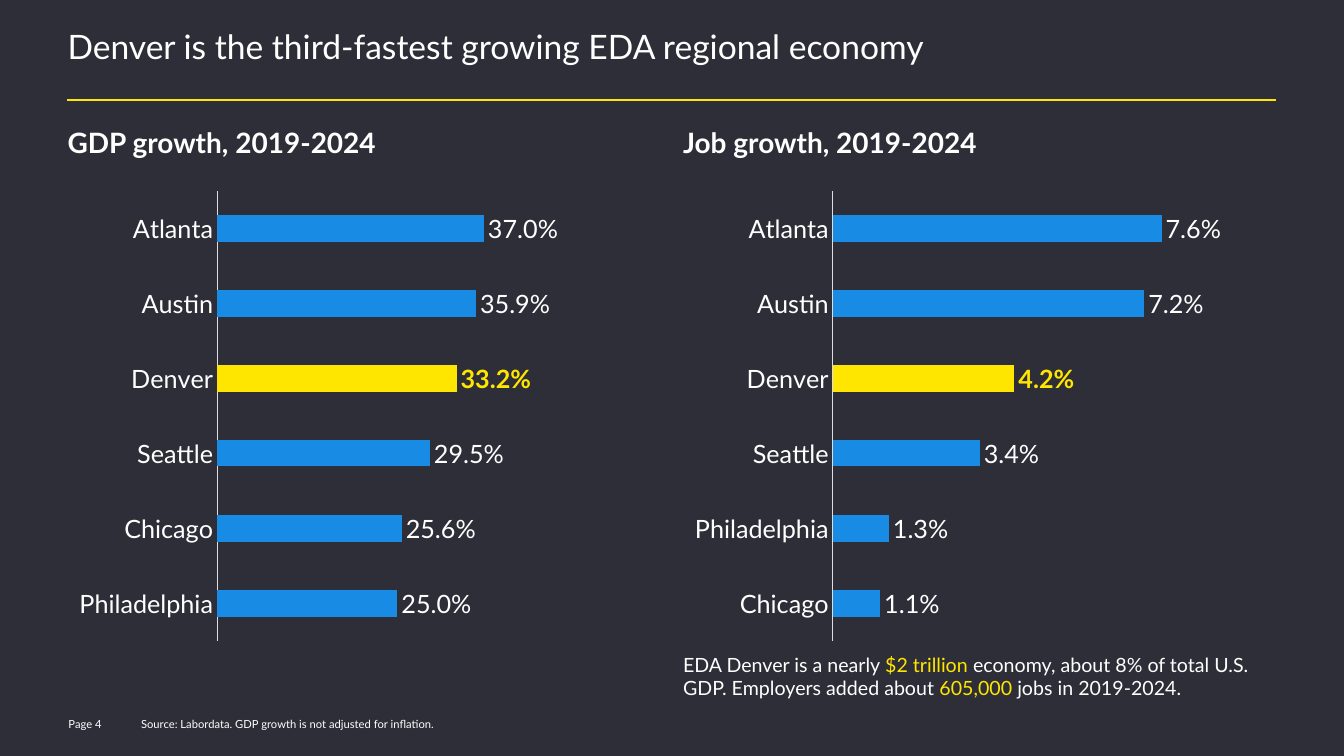
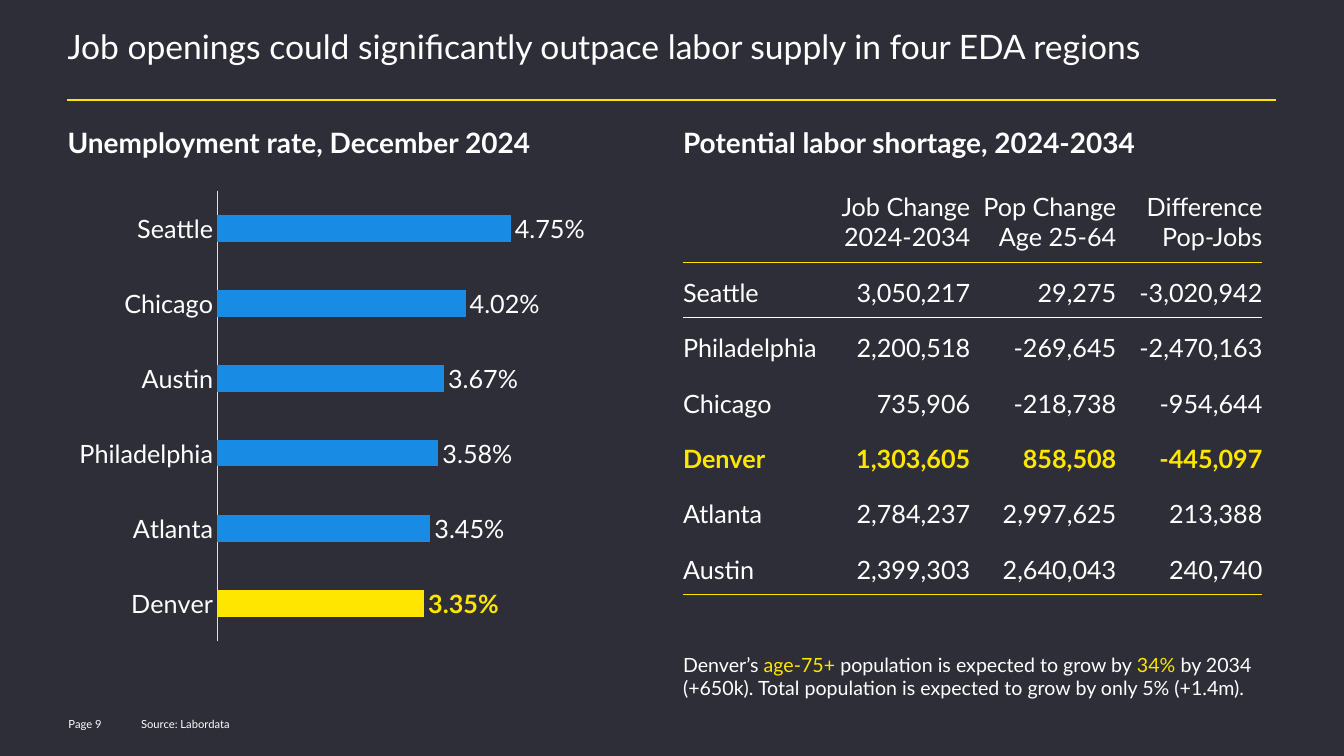
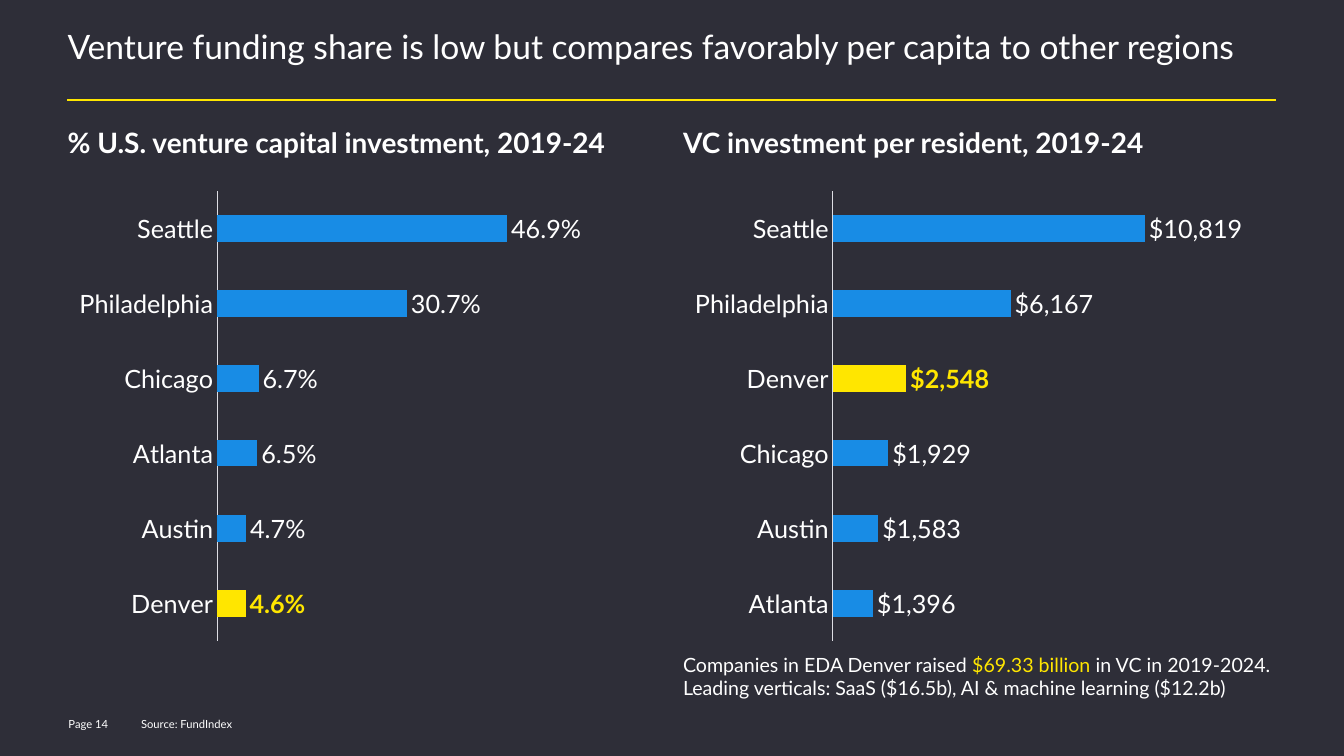
import pptx
import pptx.chart.data
import pptx.dml.color
import pptx.enum.chart
import pptx.enum.shapes
import pptx.enum.text
import pptx.oxml
import pptx.oxml.ns
import pptx.util

Pt = pptx.util.Pt
ALIGN = pptx.enum.text.PP_ALIGN
ANCHOR = pptx.enum.text.MSO_ANCHOR

COLORS = {
    "background": "2E2E38",
    "text": "FFFFFF",
    "accent": "FFE600",
    "bar": "188CE5",
    "axis": "DDDDE3",
}
FONT = "Lato"
HIGHLIGHT = "Denver"

SLIDE_WIDTH, SLIDE_HEIGHT = 960.48, 540
COLUMN_LEFTS = (48.24, 488.16)
COLUMN_WIDTH = 424.8
TITLE_BOX = (48.24, 23, 864.7, 46.8)
RULE_TOP, RULE_RIGHT = 71.5, 912.24
HEADING_TOP, HEADING_HEIGHT = 89.28, 50.4
PANEL_TOP, CHART_HEIGHT = 129.6, 334.8
NOTE_BOX = (COLUMN_LEFTS[1], 459.4, COLUMN_WIDTH, 46.8)
PAGE_BOX = (48.96, 509.76, 52, 14.4)
SOURCE_BOX = (100.8, 509.76, 394.56, 14.4)
TABLE_COLUMNS = (100.8, 104.4, 104.4, 104.4)
HEADER_HEIGHT, ROW_HEIGHT, CELL_INSET = 57.6, 39.6, 7.2

# Panel rows run from top to bottom; every second part of a note is highlighted.
SLIDES = [
    {
        "title": "Denver is the third-fastest growing EDA regional economy",
        "page": 4,
        "source": "Labordata. GDP growth is not adjusted for inflation.",
        "note": ["EDA Denver is a nearly ", "$2 trillion ",
                 "economy, about 8% of total U.S. GDP. Employers added about ",
                 "605,000", " jobs in 2019-2024."],
        "panels": [
            {"heading": "GDP growth, 2019-2024", "maximum": 0.6, "format": "0.0%",
             "bars": [("Atlanta", 0.37), ("Austin", 0.359), ("Denver", 0.332),
                      ("Seattle", 0.295), ("Chicago", 0.256), ("Philadelphia", 0.25)]},
            {"heading": "Job growth, 2019-2024", "maximum": 0.1, "format": "0.0%",
             "bars": [("Atlanta", 0.076), ("Austin", 0.072), ("Denver", 0.042),
                      ("Seattle", 0.034), ("Philadelphia", 0.013), ("Chicago", 0.011)]},
        ],
    },
    {
        "title": "Job openings could significantly outpace labor supply in four EDA regions",
        "page": 9,
        "source": "Labordata",
        "note": ["Denver’s ", "age-75+", " population is expected to grow by ", "34%",
                 " by 2034 (+650k). Total population is expected to grow by only 5% (+1.4m)."],
        "panels": [
            {"heading": "Unemployment rate, December 2024", "maximum": 0.07, "format": "0.00%",
             "bars": [("Seattle", 0.0475), ("Chicago", 0.0402), ("Austin", 0.0367),
                      ("Philadelphia", 0.0358), ("Atlanta", 0.0345), ("Denver", 0.0335)]},
            {"heading": "Potential labor shortage, 2024-2034",
             "table": [
                 ("", "Job Change\n2024-2034", "Pop Change\nAge 25-64", "Difference\nPop-Jobs"),
                 ("Seattle", "3,050,217", "29,275", "-3,020,942"),
                 ("Philadelphia", "2,200,518", "-269,645", "-2,470,163"),
                 ("Chicago", "735,906", "-218,738", "-954,644"),
                 ("Denver", "1,303,605", "858,508", "-445,097"),
                 ("Atlanta", "2,784,237", "2,997,625", "213,388"),
                 ("Austin", "2,399,303", "2,640,043", "240,740"),
             ],
             "rules": {0: "accent", 1: "text", 6: "accent"}},
        ],
    },
    {
        "title": "Venture funding share is low but compares favorably per capita to other regions",
        "page": 14,
        "source": "FundIndex",
        "note": ["Companies in EDA Denver raised ", "$69.33 billion",
                 " in VC in 2019-2024. Leading verticals: SaaS ($16.5b), "
                 "AI & machine learning ($12.2b)"],
        "panels": [
            {"heading": "% U.S. venture capital investment, 2019-24", "maximum": 0.7,
             "format": "0.0%",
             "bars": [("Seattle", 0.469), ("Philadelphia", 0.307), ("Chicago", 0.067),
                      ("Atlanta", 0.065), ("Austin", 0.047), ("Denver", 0.046)]},
            {"heading": "VC investment per resident, 2019-24", "maximum": 15000,
             "format": '"$"#,##0',
             "bars": [("Seattle", 10819), ("Philadelphia", 6167), ("Denver", 2548),
                      ("Chicago", 1929), ("Austin", 1583), ("Atlanta", 1396)]},
        ],
    },
]


def rgb(name):
    return pptx.dml.color.RGBColor.from_string(COLORS[name])


def set_font(font, size, color="text", bold=False):
    font.name, font.size, font.bold = FONT, Pt(size), bold
    font.color.rgb = rgb(color)


def place(shape, box):
    shape.left, shape.top, shape.width, shape.height = (Pt(length) for length in box)


def set_frame(text_frame, anchor):
    """Give a text frame zero insets, wrapping and a vertical anchor."""
    text_frame.margin_left = text_frame.margin_right = 0
    text_frame.margin_top = text_frame.margin_bottom = 0
    text_frame.word_wrap = True
    text_frame.auto_size = pptx.enum.text.MSO_AUTO_SIZE.NONE
    text_frame.vertical_anchor = anchor


def prepare_layout(presentation):
    """Set the shared background and the title and heading places."""
    fill = presentation.slide_master.background.fill
    fill.solid()
    fill.fore_color.rgb = rgb("background")
    layout = presentation.slide_layouts.get_by_name("Two Content")
    boxes = [TITLE_BOX] + [(left, HEADING_TOP, COLUMN_WIDTH, HEADING_HEIGHT)
                           for left in COLUMN_LEFTS]
    for placeholder, box in zip(layout.placeholders, boxes):
        place(placeholder, box)
    return layout


def add_title_rule(slide):
    rule = slide.shapes.add_connector(
        pptx.enum.shapes.MSO_CONNECTOR.STRAIGHT,
        Pt(COLUMN_LEFTS[0]), Pt(RULE_TOP), Pt(RULE_RIGHT), Pt(RULE_TOP))
    rule.line.color.rgb = rgb("accent")
    rule.line.width = Pt(1.5)
    properties = rule.element.find(pptx.oxml.ns.qn("p:spPr"))
    properties.append(pptx.oxml.parse_xml(
        f'<a:effectLst {pptx.oxml.ns.nsdecls("a")}/>'))


def fill_title(placeholder, text):
    set_frame(placeholder.text_frame, ANCHOR.TOP)
    paragraph = placeholder.text_frame.paragraphs[0]
    paragraph.text = text
    paragraph.alignment = ALIGN.LEFT
    paragraph.line_spacing = 0.85
    set_font(paragraph.font, 24)


def fill_heading(placeholder, text):
    set_frame(placeholder.text_frame, ANCHOR.TOP)
    paragraph = placeholder.text_frame.paragraphs[0]
    paragraph.text = text
    set_font(paragraph.font, 20, bold=True)
    properties = paragraph._p.get_or_add_pPr()
    properties.set("marL", "0")
    properties.set("indent", "0")
    properties.insert(0, pptx.oxml.parse_xml(
        f'<a:buNone {pptx.oxml.ns.nsdecls("a")}/>'))


def add_text(slide, box, parts, size):
    """Add one paragraph in which every second part is highlighted."""
    text_box = slide.shapes.add_textbox(*(Pt(length) for length in box))
    set_frame(text_box.text_frame, ANCHOR.MIDDLE)
    paragraph = text_box.text_frame.paragraphs[0]
    set_font(paragraph.font, size)
    for index, part in enumerate(parts):
        run = paragraph.add_run()
        run.text = part
        if index % 2:
            run.font.color.rgb = rgb("accent")


def add_bar_chart(slide, left, panel):
    bars = panel["bars"][::-1]
    cities = [city for city, value in bars]
    data = pptx.chart.data.CategoryChartData(number_format=panel["format"])
    data.categories = cities
    data.add_series("Series 1", [value for city, value in bars])
    chart = slide.shapes.add_chart(
        pptx.enum.chart.XL_CHART_TYPE.BAR_CLUSTERED,
        Pt(left), Pt(PANEL_TOP), Pt(COLUMN_WIDTH), Pt(CHART_HEIGHT), data).chart
    chart.has_legend = chart.has_title = False
    set_font(chart.font, 18)

    value_axis = chart.value_axis
    value_axis.minimum_scale, value_axis.maximum_scale = 0, panel["maximum"]
    value_axis.has_major_gridlines = False
    value_axis.visible = False
    category_axis = chart.category_axis
    category_axis.major_tick_mark = pptx.enum.chart.XL_TICK_MARK.NONE
    category_axis.format.line.color.rgb = rgb("axis")
    category_axis.format.line.width = Pt(0.75)

    plot = chart.plots[0]
    plot.gap_width = 182
    plot.vary_by_categories = False
    series = plot.series[0]
    series.format.fill.solid()
    series.format.fill.fore_color.rgb = rgb("bar")
    labels = series.data_labels
    labels.show_value = True
    labels.number_format = panel["format"]
    labels.number_format_is_linked = False
    labels.position = pptx.enum.chart.XL_LABEL_POSITION.OUTSIDE_END
    set_font(labels.font, 18)

    point = series.points[cities.index(HIGHLIGHT)]
    point.format.fill.solid()
    point.format.fill.fore_color.rgb = rgb("accent")
    set_font(point.data_label.font, 18, "accent", bold=True)
    point.data_label.position = pptx.enum.chart.XL_LABEL_POSITION.OUTSIDE_END


def add_bottom_border(cell, color):
    cell._tc.get_or_add_tcPr().insert(0, pptx.oxml.parse_xml(
        f'<a:lnB {pptx.oxml.ns.nsdecls("a")} w="{Pt(1)}"><a:solidFill>'
        f'<a:srgbClr val="{COLORS[color]}"/></a:solidFill></a:lnB>'))


def add_table(slide, left, panel):
    rows = panel["table"]
    heights = [HEADER_HEIGHT] + [ROW_HEIGHT] * (len(rows) - 1)
    table = slide.shapes.add_table(
        len(rows), len(TABLE_COLUMNS), Pt(left), Pt(PANEL_TOP),
        Pt(sum(TABLE_COLUMNS)), Pt(sum(heights))).table
    table.first_row = table.horz_banding = False
    style = table._tbl.tblPr.find(pptx.oxml.ns.qn("a:tableStyleId"))
    style.text = "{2D5ABB26-0587-4C30-8999-92F81FD0307C}"  # no style, no grid
    for column, width in zip(table.columns, TABLE_COLUMNS):
        column.width = Pt(width)
    for row_index, (values, height) in enumerate(zip(rows, heights)):
        table.rows[row_index].height = Pt(height)
        highlighted = values[0] == HIGHLIGHT
        for column_index, value in enumerate(values):
            cell = table.cell(row_index, column_index)
            cell.fill.background()
            cell.margin_left = cell.margin_right = 0
            cell.margin_top = cell.margin_bottom = Pt(CELL_INSET)
            cell.vertical_anchor = ANCHOR.BOTTOM
            cell.text = value
            for paragraph in cell.text_frame.paragraphs:
                paragraph.alignment = ALIGN.RIGHT if column_index else ALIGN.LEFT
                set_font(paragraph.font, 18, "accent" if highlighted else "text", highlighted)
            if row_index in panel["rules"]:
                add_bottom_border(cell, panel["rules"][row_index])


def add_slide(presentation, layout, content):
    slide = presentation.slides.add_slide(layout)
    title, *headings = slide.placeholders
    fill_title(title, content["title"])
    add_title_rule(slide)
    for heading, left, panel in zip(headings, COLUMN_LEFTS, content["panels"]):
        fill_heading(heading, panel["heading"])
        add_panel = add_table if "table" in panel else add_bar_chart
        add_panel(slide, left, panel)
    add_text(slide, NOTE_BOX, content["note"], 14)
    add_text(slide, PAGE_BOX, [f"Page {content['page']}"], 8)
    add_text(slide, SOURCE_BOX, [f"Source: {content['source']}"], 8)


def main():
    presentation = pptx.Presentation()
    presentation.slide_width, presentation.slide_height = Pt(SLIDE_WIDTH), Pt(SLIDE_HEIGHT)
    layout = prepare_layout(presentation)
    for content in SLIDES:
        add_slide(presentation, layout, content)
    presentation.save("out.pptx")


if __name__ == "__main__":
    main()
